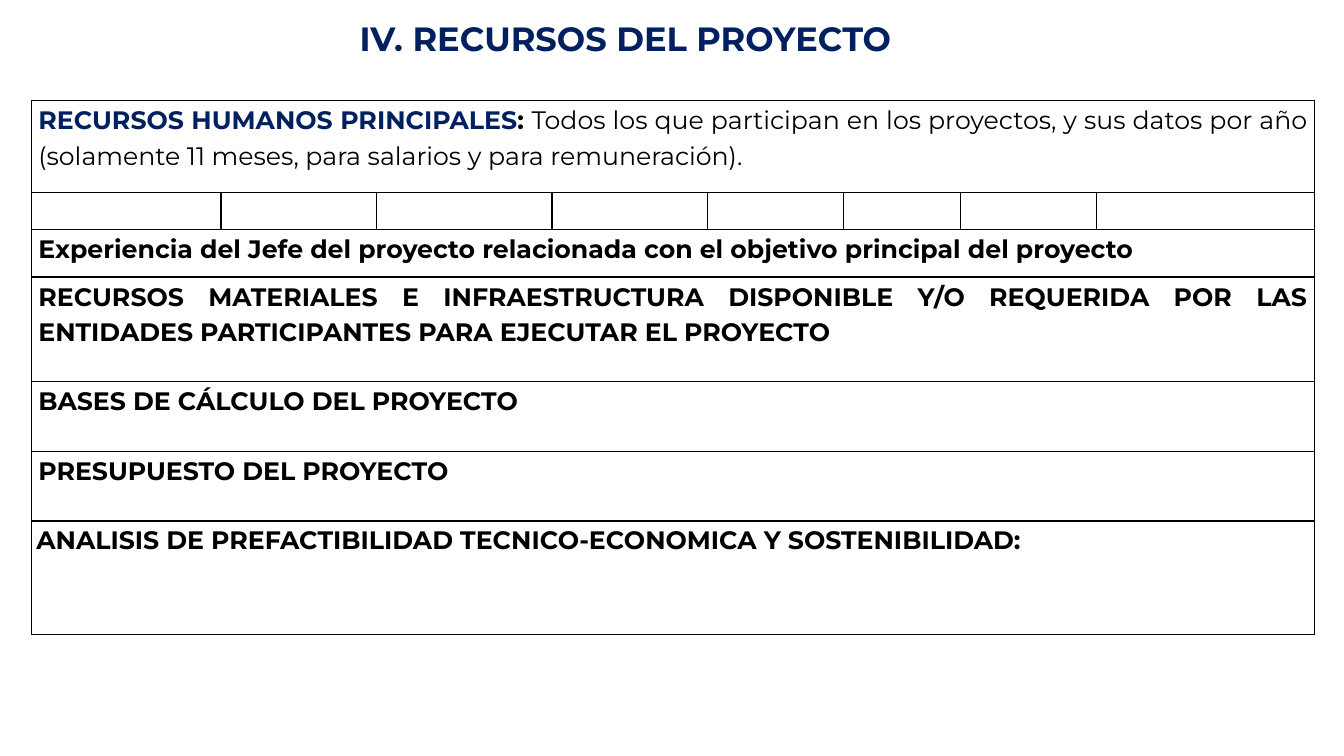
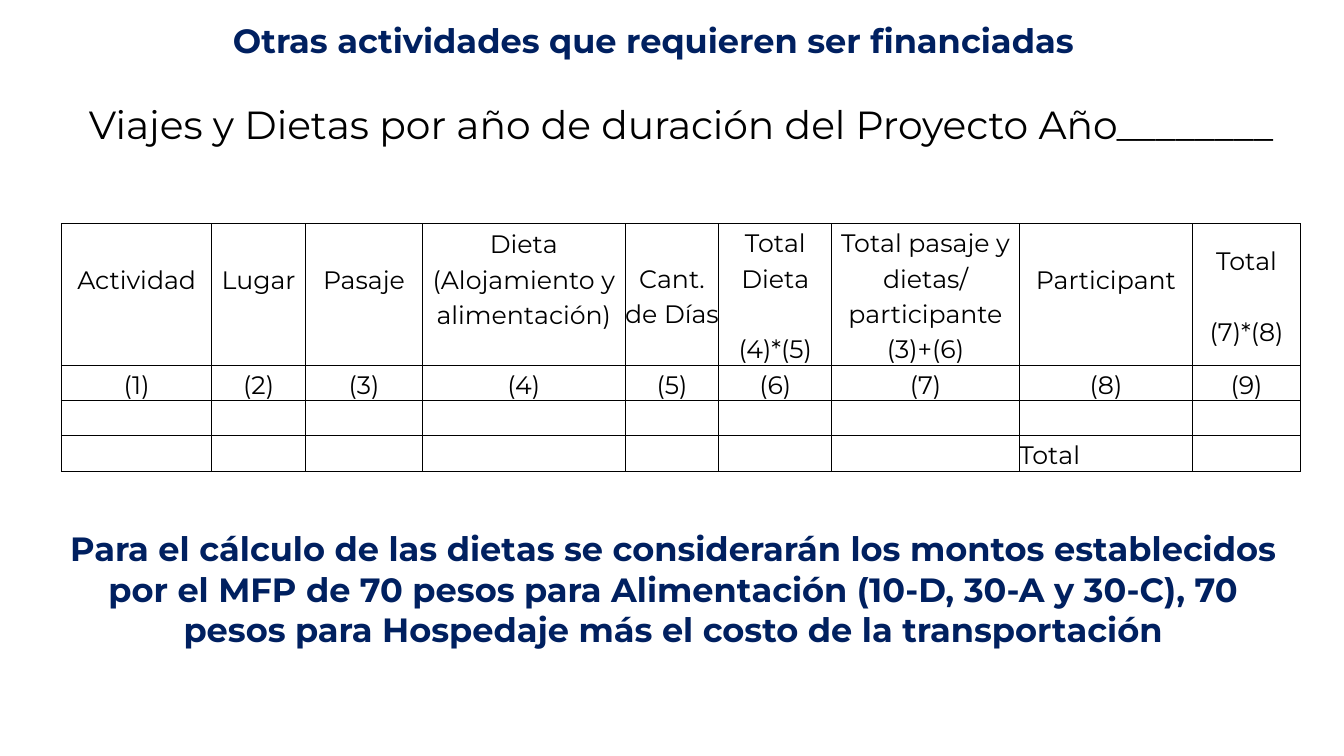
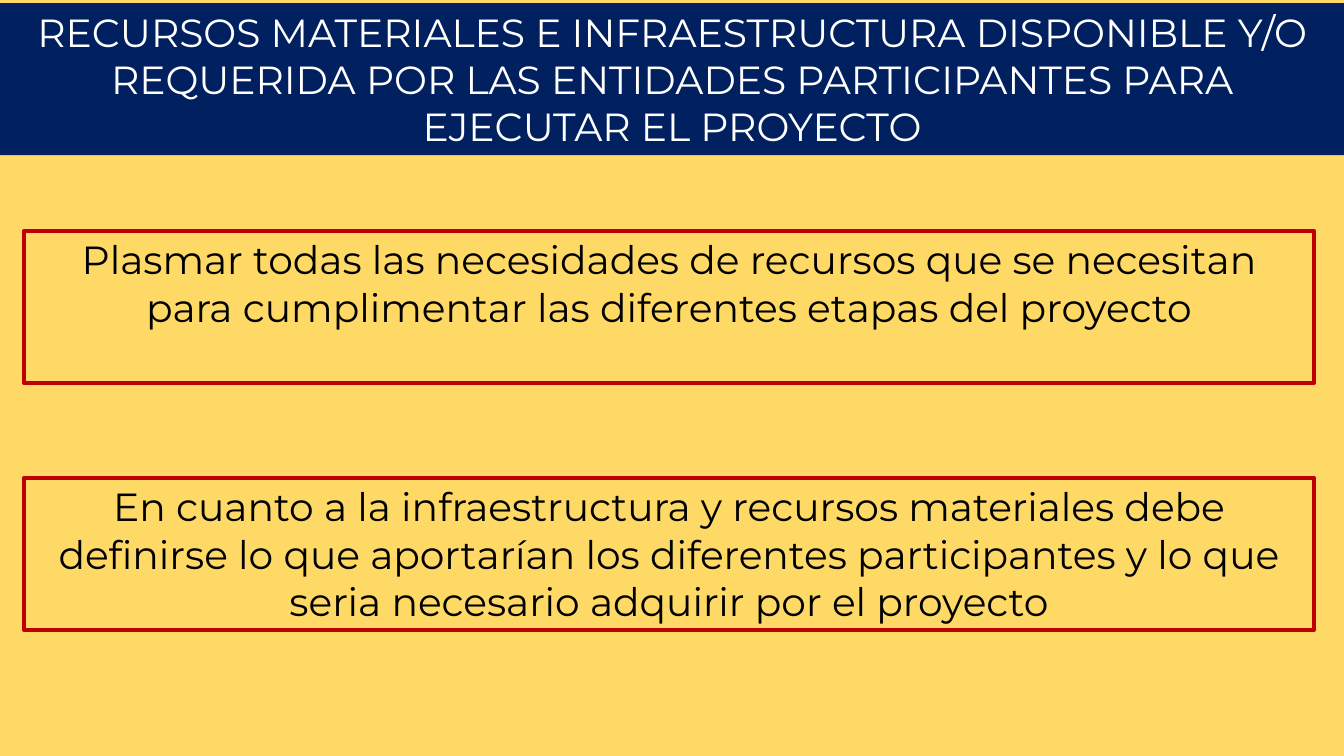
"""Build three slides on project resources, travel costs and infrastructure."""
from dataclasses import dataclass, replace

from lxml.etree import SubElement
from pptx import Presentation
from pptx.dml.color import RGBColor
from pptx.enum.shapes import MSO_SHAPE
from pptx.enum.text import MSO_ANCHOR, MSO_AUTO_SIZE, PP_ALIGN
from pptx.oxml.ns import qn
from pptx.util import Inches, Pt

WIDTH, HEIGHT = Inches(13.33), Inches(7.5)
TITLE_ONLY = 5
FONT = "Montserrat"
COLORS = {
    "navy": "002060",
    "black": "000000",
    "white": "FFFFFF",
    "yellow": "FFD966",
    "red": "C00000",
}


@dataclass(frozen=True)
class Style:
    """Look of a piece of text."""
    size: int = 18
    color: str = "black"
    bold: bool = False
    align: PP_ALIGN = PP_ALIGN.CENTER
    spacing: float = 1.0


TITLE = Style(24, "navy", True, PP_ALIGN.LEFT)
NOTE = replace(TITLE, align=PP_ALIGN.CENTER)
LARGE = Style(28)
BANNER = replace(LARGE, color="white")
CELL = Style(spacing=1.15)
ENTRY = replace(CELL, bold=True, align=PP_ALIGN.JUSTIFY)

RESOURCE_COLUMNS = [1.88, 1.54, 1.74, 1.54, 1.35, 1.16, 1.35, 2.16]
RESOURCE_ROWS = [0.91, 0.37, 0.47, 1.04, 0.69, 0.69, 1.13]
RESOURCES = {
    2: "Experiencia del Jefe del proyecto relacionada con el objetivo principal del proyecto",
    3: "RECURSOS MATERIALES E INFRAESTRUCTURA DISPONIBLE Y/O REQUERIDA "
       "POR LAS ENTIDADES PARTICIPANTES PARA EJECUTAR EL PROYECTO",
    4: "BASES DE CÁLCULO DEL PROYECTO",
    5: "PRESUPUESTO DEL PROYECTO",
    6: "ANALISIS DE PREFACTIBILIDAD TECNICO-ECONOMICA Y SOSTENIBILIDAD:",
}

TRAVEL_COLUMNS = [1.49, 0.93, 1.16, 2.01, 0.93, 1.12, 1.86, 1.72, 1.07]
TRAVEL_ROWS = [1.38, 0.35, 0.35, 0.35]
TRAVEL_HEADERS = [
    "Actividad", "Lugar", "Pasaje", "Dieta (Alojamiento y alimentación)",
    "Cant. de Días", "Total\nDieta\n(4)*(5)",
    "Total pasaje y dietas/\nparticipante\n(3)+(6)", "Participant", "Total\n(7)*(8)",
]
RAISED_HEADERS = {0, 1, 2, 3, 7}
SPLIT_HEADERS = {5, 8}

NEEDS = [
    "Plasmar todas las necesidades de recursos que se necesitan para cumplimentar "
    "las diferentes etapas del proyecto",
    "En cuanto a la infraestructura y recursos materiales debe definirse lo que aportarían "
    "los diferentes participantes y lo que seria necesario adquirir por el proyecto",
]


def rgb(name):
    """Return the named colour."""
    return RGBColor.from_string(COLORS[name])


def area(left, top, width, height):
    """Turn percentages of the slide into left, top, width and height."""
    return (int(WIDTH * left / 100), int(HEIGHT * top / 100),
            int(WIDTH * width / 100), int(HEIGHT * height / 100))


def add_span(para, text, style):
    """Append a formatted run to a paragraph."""
    span = para.add_run()
    span.text = text
    span.font.name = FONT
    span.font.size = Pt(style.size)
    span.font.bold = style.bold
    span.font.color.rgb = rgb(style.color)


def write(frame, text, style):
    """Fill a text frame with one paragraph for each line of text."""
    for index, line in enumerate(text.split("\n")):
        para = frame.add_paragraph() if index else frame.paragraphs[0]
        para.alignment = style.align
        para.line_spacing = style.spacing
        add_span(para, line, style)


def fill_box(box, text, style):
    """Write wrapped text from the top of a box."""
    frame = box.text_frame
    frame.word_wrap = True
    frame.auto_size = MSO_AUTO_SIZE.NONE
    frame.vertical_anchor = MSO_ANCHOR.TOP
    write(frame, text, style)


def add_page(deck, title, place, style=TITLE):
    """Add a slide with its title and return it."""
    page = deck.slides.add_slide(deck.slide_layouts[TITLE_ONLY])
    box = page.shapes.title
    box.left, box.top, box.width, box.height = area(*place)
    fill_box(box, title, style)
    return page


def add_text(page, text, place, style):
    """Add a plain text box."""
    fill_box(page.shapes.add_textbox(*area(*place)), text, style)


def add_framed_text(page, text, place):
    """Add text in a red outlined rectangle."""
    box = page.shapes.add_shape(MSO_SHAPE.RECTANGLE, *area(*place))
    box.shadow.inherit = False
    box.fill.background()
    box.line.color.rgb = rgb("red")
    box.line.width = Pt(3)
    fill_box(box, text, LARGE)


def format_cell(cell, side_margin):
    """Give a cell black borders, a white fill and tight margins."""
    properties = cell._tc.get_or_add_tcPr()
    for side in ("a:lnL", "a:lnR", "a:lnT", "a:lnB"):
        border = SubElement(properties, qn(side), w=str(Pt(1)))
        fill = SubElement(border, qn("a:solidFill"))
        SubElement(fill, qn("a:srgbClr"), val=COLORS["black"])
    cell.fill.solid()
    cell.fill.fore_color.rgb = rgb("white")
    cell.margin_left = cell.margin_right = Inches(side_margin)
    cell.margin_top = cell.margin_bottom = 0


def add_grid(page, place, columns, rows, side_margin=0):
    """Add a bordered table whose columns and rows share its area by weight."""
    left, top, width, height = area(*place)
    table = page.shapes.add_table(len(rows), len(columns), left, top, width, height).table
    table.first_row = table.horz_banding = False
    for column, weight in zip(table.columns, columns):
        column.width = int(width * weight / sum(columns))
    for row, weight in zip(table.rows, rows):
        row.height = int(height * weight / sum(rows))
    for cell in table.iter_cells():
        format_cell(cell, side_margin)
    return table


def build_resources(deck):
    """Build the slide that outlines the project resources."""
    page = add_page(deck, "IV. RECURSOS DEL PROYECTO", (26, 1.75, 45.2, 6.67))
    table = add_grid(page, (2.33, 13.33, 95.5, 70.67), RESOURCE_COLUMNS, RESOURCE_ROWS, 0.07)
    last_column = len(RESOURCE_COLUMNS) - 1
    for row in (0, *RESOURCES):
        table.cell(row, 0).merge(table.cell(row, last_column))
    for row, text in RESOURCES.items():
        write(table.cell(row, 0).text_frame, text, ENTRY)
    analysis = table.cell(len(RESOURCE_ROWS) - 1, 0)
    analysis.margin_left = analysis.margin_right = Inches(0.05)

    staff = table.cell(0, 0).text_frame
    write(staff, "RECURSOS HUMANOS PRINCIPALES", replace(ENTRY, color="navy"))
    add_span(staff.paragraphs[0], ": ", ENTRY)
    add_span(staff.paragraphs[0],
             "Todos los que participan en los proyectos, y sus datos por año "
             "(solamente 11 meses, para salarios y para remuneración).",
             replace(ENTRY, bold=False))


def build_travel(deck):
    """Build the slide with the travel and allowance form."""
    page = add_page(deck, "Otras actividades que requieren ser financiadas",
                    (16.58, 2, 69, 6.67))
    table = add_grid(page, (4.58, 29.6, 92.2, 32.4), TRAVEL_COLUMNS, TRAVEL_ROWS)
    for column, text in enumerate(TRAVEL_HEADERS):
        header = table.cell(0, column)
        header.vertical_anchor = MSO_ANCHOR.MIDDLE
        write(header.text_frame, text, CELL)
        if column in RAISED_HEADERS:
            header.margin_bottom = Inches(0.33)
        if column in SPLIT_HEADERS:
            header.text_frame.paragraphs[-1].space_before = Pt(25)
        write(table.cell(1, column).text_frame, f"({column + 1})", CELL)
    write(table.cell(3, 7).text_frame, "Total", replace(CELL, align=PP_ALIGN.LEFT))

    add_text(page, "Viajes y Dietas por año de duración del Proyecto Año________",
             (4.58, 12.67, 92.2, 13.87), LARGE)
    add_text(page,
             "Para el cálculo de las dietas se considerarán los montos establecidos "
             "por el MFP de 70 pesos para Alimentación (10-D, 30-A y 30-C), 70 pesos "
             "para Hospedaje más el costo de la transportación",
             (3.38, 69.2, 93.4, 22.93), NOTE)


def build_infrastructure(deck):
    """Build the slide on materials and infrastructure."""
    page = add_page(deck, RESOURCES[3], (0, 0.4, 100, 20.13), BANNER)
    page.background.fill.solid()
    page.background.fill.fore_color.rgb = rgb("yellow")
    page.shapes.title.fill.solid()
    page.shapes.title.fill.fore_color.rgb = rgb("navy")
    for index, text in enumerate(NEEDS):
        add_framed_text(page, text, (1.8, 30.53 + index * 32.67, 95.95, 20.13))


def main():
    """Create the deck and save it."""
    deck = Presentation()
    deck.slide_width, deck.slide_height = WIDTH, HEIGHT
    build_resources(deck)
    build_travel(deck)
    build_infrastructure(deck)
    deck.save("out.pptx")


if __name__ == "__main__":
    main()
